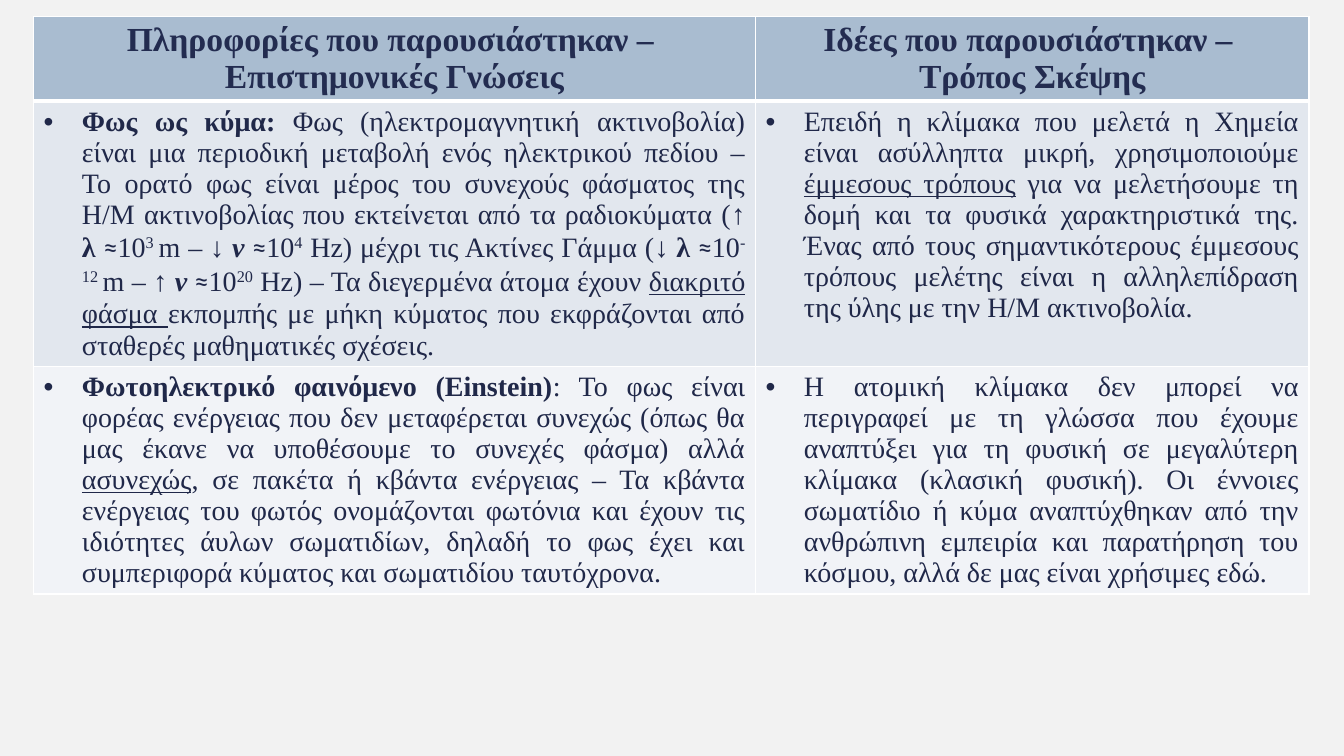
from dataclasses import dataclass

from lxml.etree import SubElement
from pptx import Presentation
from pptx.dml.color import RGBColor
from pptx.enum.text import PP_ALIGN
from pptx.oxml.ns import qn
from pptx.util import Inches, Pt


@dataclass(frozen=True)
class Theme:
    background: str = "F2F2F2"
    header_fill: str = "A9BCD0"
    row_fills: tuple = ("E2E7EE", "F1F3F7")
    header_text: str = "232C50"
    body_text: str = "202849"
    border: str = "FFFFFF"
    font: str = "Times New Roman"
    symbol_font: str = "Calibri"
    header_size: int = 24
    body_size: int = 20
    thin: int = 1
    thick: int = 3


THEME = Theme()
SLIDE_WIDTH, SLIDE_HEIGHT = Inches(13.33), Inches(7.5)
COLUMN_INCHES = (7.16, 5.49)
ROW_INCHES = (0.83, 2.63, 2.26)
BULLET_INDENT = Inches(0.38)


def wave_range(wavelength_arrow, metres_power, frequency_arrow, hertz_power):
    """Wavelength and frequency at one end of the spectrum, as (text, style) runs."""
    return [
        (f"{wavelength_arrow} λ ", "bold"), ("≈", "symbol"), ("10", ""),
        (f"{metres_power} ", "super"), ("m – ", ""),
        (f"{frequency_arrow} ", "bold"), ("ν ", "bold italic"), ("≈", "symbol"),
        ("10", ""), (hertz_power, "super"),
    ]


HEADERS = (
    "Πληροφορίες που παρουσιάστηκαν – \vΕπιστημονικές Γνώσεις",
    "Ιδέες που παρουσιάστηκαν – \vΤρόπος Σκέψης",
)

LIGHT_AS_WAVE = [
    ("Φως ως κύμα: ", "bold"),
    ("Φως (ηλεκτρομαγνητική ακτινοβολία) είναι μια περιοδική μεταβολή ενός "
     "ηλεκτρικού πεδίου – Το ορατό φως είναι μέρος του συνεχούς φάσματος της "
     "Η/Μ ακτινοβολίας που εκτείνεται από τα ραδιοκύματα (", ""),
    *wave_range("↑", "3", "↓", "4"),
    (" Hz) μέχρι τις Ακτίνες Γάμμα (", ""),
    *wave_range("↓", "-12", "↑", "20"),
    (" Hz) – Τα διεγερμένα άτομα έχουν ", ""),
    ("διακριτό φάσμα ", "underline"),
    ("εκπομπής με μήκη κύματος που εκφράζονται από σταθερές μαθηματικές σχέσεις.", ""),
]

INDIRECT_METHODS = [
    ("Επειδή η κλίμακα που μελετά η Χημεία είναι ασύλληπτα μικρή, χρησιμοποιούμε ", ""),
    ("έμμεσους τρόπους", "underline"),
    (" για να μελετήσουμε τη δομή και τα φυσικά χαρακτηριστικά της. Ένας από τους "
     "σημαντικότερους έμμεσους τρόπους μελέτης είναι η αλληλεπίδραση της ύλης με "
     "την Η/Μ ακτινοβολία. ", ""),
]

PHOTOELECTRIC_EFFECT = [
    ("Φωτοηλεκτρικό φαινόμενο (Einstein)", "bold"),
    (": Το φως είναι φορέας ενέργειας που δεν μεταφέρεται συνεχώς (όπως θα μας "
     "έκανε να υποθέσουμε το συνεχές φάσμα) αλλά ", ""),
    ("ασυνεχώς", "underline"),
    (", σε πακέτα ή κβάντα ενέργειας – Τα κβάντα ενέργειας του φωτός ονομάζονται "
     "φωτόνια και έχουν τις ιδιότητες άυλων σωματιδίων, δηλαδή το φως έχει και "
     "συμπεριφορά κύματος και σωματιδίου ταυτόχρονα.", ""),
]

ATOMIC_SCALE = [
    ("Η ατομική κλίμακα δεν μπορεί να περιγραφεί με τη γλώσσα που έχουμε αναπτύξει "
     "για τη φυσική σε μεγαλύτερη κλίμακα (κλασική φυσική). Οι έννοιες σωματίδιο ή "
     "κύμα αναπτύχθηκαν από την ανθρώπινη εμπειρία και παρατήρηση του κόσμου, αλλά "
     "δε μας είναι χρήσιμες εδώ.", ""),
]

BODY_ROWS = (
    (LIGHT_AS_WAVE, INDIRECT_METHODS),
    (PHOTOELECTRIC_EFFECT, ATOMIC_SCALE),
)


def set_font(paragraph, size, colour, bold):
    paragraph.font.name = THEME.font
    paragraph.font.size = Pt(size)
    paragraph.font.color.rgb = RGBColor.from_string(colour)
    paragraph.font.bold = bold


def paint_cell(cell, fill, top, bottom):
    """Border the cell, with its own top and bottom widths, then fill it."""
    properties = cell._tc.get_or_add_tcPr()
    widths = {"a:lnL": THEME.thin, "a:lnR": THEME.thin, "a:lnT": top, "a:lnB": bottom}
    for side, width in widths.items():
        line = SubElement(properties, qn(side), w=str(Pt(width)))
        SubElement(SubElement(line, qn("a:solidFill")), qn("a:srgbClr"), val=THEME.border)
    cell.fill.solid()
    cell.fill.fore_color.rgb = RGBColor.from_string(fill)


def write_header(cell, heading):
    paint_cell(cell, THEME.header_fill, THEME.thin, THEME.thick)
    paragraph = cell.text_frame.paragraphs[0]
    paragraph.text = heading
    paragraph.alignment = PP_ALIGN.CENTER
    set_font(paragraph, THEME.header_size, THEME.header_text, True)


def add_styled_run(paragraph, text, style):
    run = paragraph.add_run()
    run.text = text
    if "bold" in style:
        run.font.bold = True
    if "italic" in style:
        run.font.italic = True
    if "underline" in style:
        run.font.underline = True
    if "symbol" in style:
        run.font.name = THEME.symbol_font
    if "super" in style:
        run._r.get_or_add_rPr().set("baseline", "30000")


def write_bullet(cell, runs):
    paragraph = cell.text_frame.paragraphs[0]
    paragraph.alignment = PP_ALIGN.JUSTIFY
    properties = paragraph._p.get_or_add_pPr()
    properties.set("marL", str(BULLET_INDENT))
    properties.set("indent", str(-BULLET_INDENT))
    SubElement(properties, qn("a:buFont"), typeface="Arial")
    SubElement(properties, qn("a:buChar"), char="•")
    set_font(paragraph, THEME.body_size, THEME.body_text, False)
    for text, style in runs:
        add_styled_run(paragraph, text, style)


def add_comparison_table(slide):
    frame = slide.shapes.add_table(
        len(ROW_INCHES), len(COLUMN_INCHES),
        int(SLIDE_WIDTH * 0.025), int(SLIDE_HEIGHT * 0.022),
        Inches(sum(COLUMN_INCHES)), Inches(sum(ROW_INCHES)),
    )
    table = frame.table
    table.first_row = table.horz_banding = False
    for column, width in zip(table.columns, COLUMN_INCHES):
        column.width = Inches(width)
    for row, height in zip(table.rows, ROW_INCHES):
        row.height = Inches(height)

    for column, heading in enumerate(HEADERS):
        write_header(table.cell(0, column), heading)
    for row, (contents, fill) in enumerate(zip(BODY_ROWS, THEME.row_fills), start=1):
        top = THEME.thick if row == 1 else THEME.thin
        for column, runs in enumerate(contents):
            cell = table.cell(row, column)
            paint_cell(cell, fill, top, THEME.thin)
            write_bullet(cell, runs)


def main():
    deck = Presentation()
    deck.slide_width, deck.slide_height = SLIDE_WIDTH, SLIDE_HEIGHT
    slide = deck.slides.add_slide(deck.slide_layouts.get_by_name("Blank"))
    slide.background.fill.solid()
    slide.background.fill.fore_color.rgb = RGBColor.from_string(THEME.background)
    add_comparison_table(slide)
    deck.save("out.pptx")


if __name__ == "__main__":
    main()
